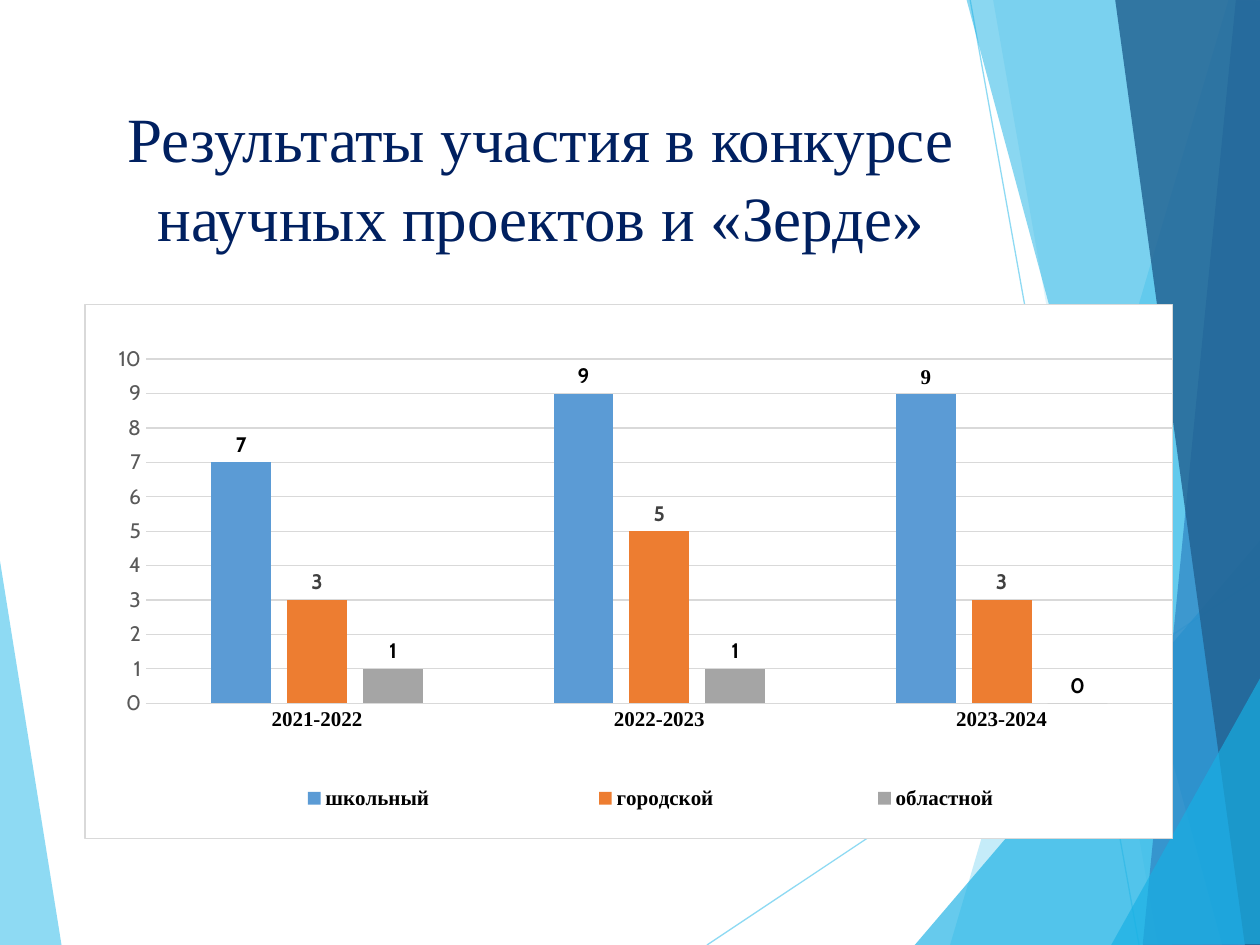
from lxml import etree
from pptx import Presentation
from pptx.chart.data import CategoryChartData
from pptx.dml.color import RGBColor
from pptx.enum.chart import (XL_CHART_TYPE as ChartType, XL_LABEL_POSITION as LabelPosition,
                             XL_LEGEND_POSITION as LegendPosition, XL_TICK_MARK as TickMark)
from pptx.enum.shapes import MSO_CONNECTOR as Connector
from pptx.enum.text import MSO_ANCHOR as Anchor, MSO_AUTO_SIZE as AutoSize, PP_ALIGN as Align
from pptx.oxml import parse_xml
from pptx.oxml.ns import nsdecls, qn
from pptx.util import Pt


def paint(fill, color, opacity=100):
    fill.solid()
    fill.fore_color.rgb = RGBColor.from_string(color)
    if opacity < 100:
        color_element = fill._xPr.find(".//" + qn("a:srgbClr"))
        etree.SubElement(color_element, qn("a:alpha"), val=str(opacity * 1000))


def style_font(font, size, color, name, bold=False):
    font.size, font.name, font.bold = Pt(size), name, bold
    font.color.rgb = RGBColor.from_string(color)


presentation = Presentation()
presentation.slide_width, presentation.slide_height = Pt(720), Pt(540)
slide = presentation.slides.add_slide(presentation.slide_layouts[5])
shapes = slide.shapes

# Thin lines behind the facets
for start_x, start_y, end_x, end_y in [(404, 540, 720.7, 329), (554.4, 0, 650.9, 540)]:
    line = shapes.add_connector(Connector.STRAIGHT, Pt(start_x), Pt(start_y), Pt(end_x), Pt(end_y))
    line.line.width = Pt(0.75)
    paint(line.line.fill, "5FCBEF", 70)
    etree.SubElement(line._element.spPr, qn("a:effectLst"))

# Translucent facets: colour, opacity, corners
facets = [
    ("5FCBEF", 70, [(-0.7, 316), (35.3, 540.7), (-0.7, 540)]),
    ("5FCBEF", 36, [(702, 0), (542.9, 540), (721, 540.7), (720.7, 0.7)]),
    ("5FCBEF", 20, [(567.4, -0.7), (661.7, 540), (720.7, 540), (720.7, -0.7)]),
    ("17B0E4", 66, [(522.7, 540), (720, 308.9), (720.7, 540)]),
    ("17B0E4", 50, [(552.2, -0.7), (698.4, 540), (720.7, 539.3), (720.7, -0.7)]),
    ("2E83C3", 70, [(706.3, -0.7), (653, 540), (720.7, 540), (720, -0.7)]),
    ("226292", 82, [(637.2, -0.7), (711.4, 540), (721.4, 540), (720, -0.7)]),
    ("17B0E4", 66, [(635, 540), (721.4, 385.2), (721.4, 539.3)]),
]
for color, opacity, corners in facets:
    corners = [(Pt(x), Pt(y)) for x, y in corners]
    builder = shapes.build_freeform(*corners[0])
    builder.add_line_segments(corners[1:], close=True)
    facet = builder.convert_to_shape()
    facet.shadow.inherit = False
    facet.line.fill.background()
    paint(facet.fill, color, opacity)

# Title
title = shapes.title
title.left, title.top, title.width, title.height = Pt(48), Pt(48), Pt(522), Pt(104)
title_frame = title.text_frame
title_frame.text = "Результаты участия в конкурсе научных проектов и «Зерде»"
title_frame.word_wrap = True
title_frame.auto_size = AutoSize.NONE
title_frame.vertical_anchor = Anchor.MIDDLE
paragraph = title_frame.paragraphs[0]
paragraph.alignment = Align.CENTER
paragraph.line_spacing = 1.05
style_font(paragraph.runs[0].font, 36, "002060", "Times New Roman")

# Chart
chart_data = CategoryChartData()
chart_data.categories = ["2021-2022", "2022-2023", "2023-2024"]
chart_data.add_series("школьный ", (7, 9, 9))
chart_data.add_series("городской", (3, 5, 3))
chart_data.add_series("областной", (1, 1, 0))
chart = shapes.add_chart(ChartType.COLUMN_CLUSTERED, Pt(48.2), Pt(173.8),
                         Pt(622.4), Pt(305.6), chart_data).chart
style_font(chart.font, 10, "000000", "Cabin")
chart.has_title = False
plot = chart.plots[0]
plot.gap_width, plot.overlap = 219, -27
plot.vary_by_categories = False

# Columns and their labels
for series, color, label_color in zip(plot.series, ["5B9BD5", "ED7D31", "A5A5A5"],
                                      ["000000", "404040", "000000"]):
    paint(series.format.fill, color)
    labels = series.data_labels
    labels.show_value = True
    labels.position = LabelPosition.OUTSIDE_END
    style_font(labels.font, 12, label_color, "Cabin", True)
last_label = plot.series[0].points[2].data_label
style_font(last_label.font, 12, "000000", "Times New Roman", True)
last_label.position = LabelPosition.OUTSIDE_END

# Axes
category_axis, value_axis = chart.category_axis, chart.value_axis
for axis in (category_axis, value_axis):
    axis.major_tick_mark = axis.minor_tick_mark = TickMark.NONE
style_font(category_axis.tick_labels.font, 12, "000000", "Times New Roman", True)
style_font(value_axis.tick_labels.font, 12, "595959", "Cabin")
value_axis.minimum_scale, value_axis.maximum_scale, value_axis.major_unit = 0, 10, 1
value_axis.format.line.fill.background()
for line_format in (category_axis.format.line, value_axis.major_gridlines.format.line):
    line_format.width = Pt(0.75)
    paint(line_format.fill, "D9D9D9")

# Legend
chart.has_legend = True
legend = chart.legend
legend.position = LegendPosition.BOTTOM
legend.include_in_layout = False
style_font(legend.font, 12, "000000", "Times New Roman", True)

# Fixed places of the plot area and legend, as fractions of the chart
plot_area = chart._chartSpace.chart.plotArea
for element, target, box in [(plot_area, '<c:layoutTarget val="inner"/>', (0.056, 0.102, 0.944, 0.645)),
                             (legend._element, "", (0.06, 0.88, 0.92, 0.09))]:
    for old_layout in element.findall(qn("c:layout")):
        element.remove(old_layout)
    x, y, width, height = box
    layout = parse_xml(
        f'<c:layout {nsdecls("c")}><c:manualLayout>{target}'
        '<c:xMode val="edge"/><c:yMode val="edge"/>'
        f'<c:x val="{x}"/><c:y val="{y}"/><c:w val="{width}"/><c:h val="{height}"/>'
        '</c:manualLayout></c:layout>')
    element.insert(0 if element is plot_area else 1, layout)

# White chart background with a grey border
chart._chartSpace.chart.addnext(parse_xml(
    f'<c:spPr {nsdecls("c", "a")}><a:solidFill><a:srgbClr val="FFFFFF"/></a:solidFill>'
    '<a:ln w="9525"><a:solidFill><a:srgbClr val="D9D9D9"/></a:solidFill></a:ln></c:spPr>'))

presentation.save("out.pptx")
